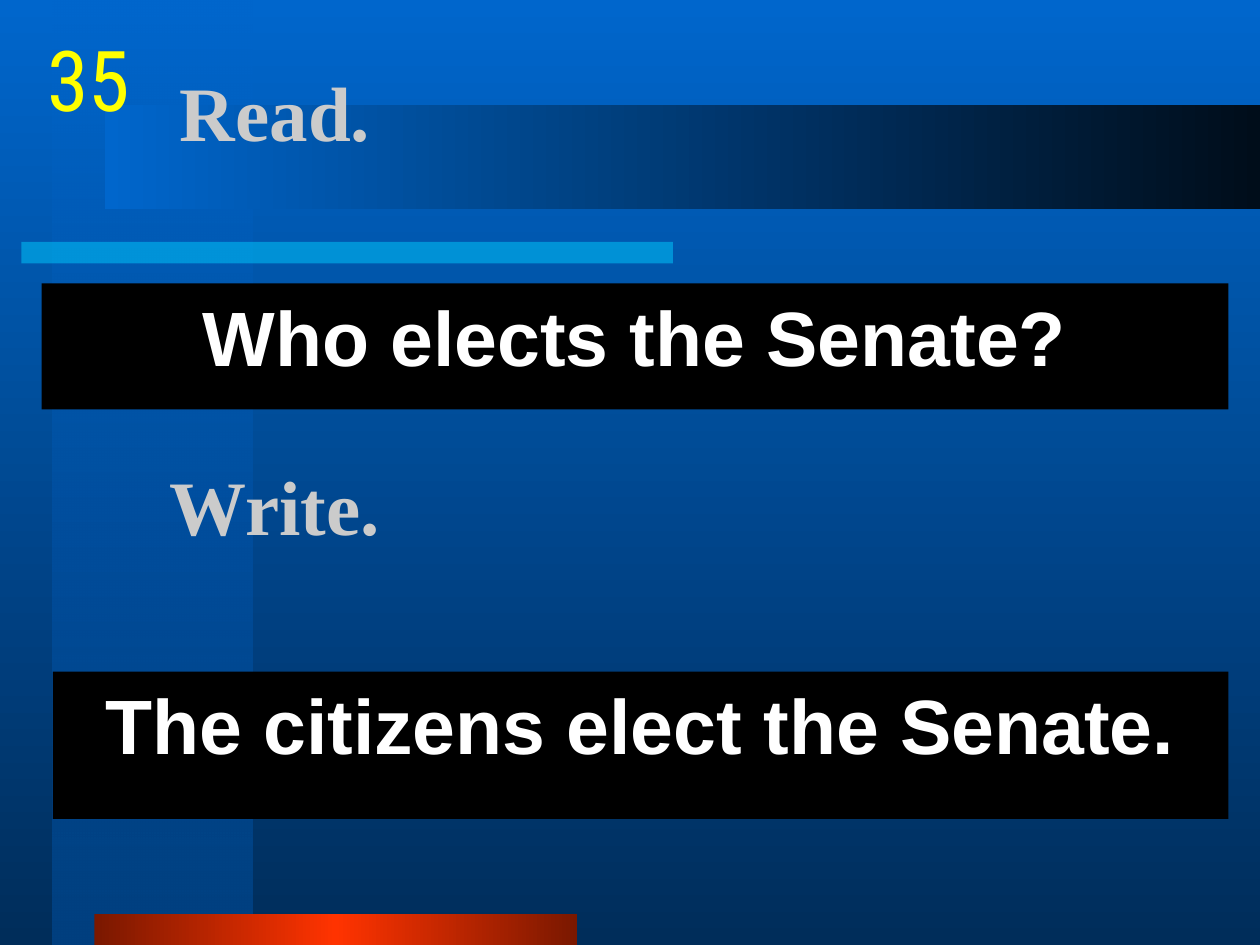
from dataclasses import dataclass

import pptx
import pptx.util
from pptx.dml.color import RGBColor
from pptx.enum.shapes import MSO_SHAPE
from pptx.enum.text import MSO_ANCHOR, PP_ALIGN
from pptx.oxml import parse_xml
from pptx.oxml.ns import nsdecls, qn
from pptx.util import Inches

BLUE = RGBColor(0x00, 0x66, 0xCC)
COLUMN_BLUE = RGBColor(0x00, 0x40, 0x80)
NAVY = RGBColor(0x00, 0x2D, 0x5A)
NIGHT = RGBColor(0x00, 0x0D, 0x1A)
CYAN = RGBColor(0x00, 0xCC, 0xFF)
RED = RGBColor(0xFF, 0x33, 0x00)
DARK_RED = RGBColor(0x7A, 0x18, 0x00)
BLACK = RGBColor(0x00, 0x00, 0x00)
WHITE = RGBColor(0xFF, 0xFF, 0xFF)
GREY = RGBColor(0xCB, 0xCB, 0xCB)
YELLOW = RGBColor(0xFF, 0xFF, 0x00)

DOWN, ACROSS = 270, 0  # gradient angles, counter-clockwise


@dataclass(frozen=True)
class Box:
    left: float
    top: float
    width: float
    height: float

    def lengths(self) -> list:
        return [Inches(n) for n in (self.left, self.top, self.width, self.height)]


@dataclass(frozen=True)
class Stop:
    percent: int
    color: RGBColor
    opacity: int = 100


@dataclass(frozen=True)
class Bar:
    box: Box
    stops: tuple
    angle: int = ACROSS


@dataclass(frozen=True)
class Caption:
    text: str
    box: Box
    font: str
    color: RGBColor
    size: int = 44
    bold: bool = True
    centred: bool = False
    panel: bool = False
    wrap: bool = True
    side_inset: float = 0.1
    anchor: MSO_ANCHOR = MSO_ANCHOR.TOP


def color_xml(stop: Stop) -> str:
    return (f'<a:srgbClr {nsdecls("a")} val="{stop.color}">'
            f'<a:alpha val="{stop.opacity * 1000}"/></a:srgbClr>')


def fill_gradient(fill, element, stops: tuple, angle: int) -> None:
    fill.gradient()
    fill.gradient_angle = angle
    stop_list = next(element.iter(qn("a:gsLst")))
    for default in list(stop_list):
        stop_list.remove(default)
    for stop in stops:
        stop_list.append(parse_xml(
            f'<a:gs {nsdecls("a")} pos="{stop.percent * 1000}">{color_xml(stop)}</a:gs>'))


def add_rectangle(slide, box: Box):
    rectangle = slide.shapes.add_shape(MSO_SHAPE.RECTANGLE, *box.lengths())
    rectangle.shadow.inherit = False
    rectangle.line.fill.background()
    return rectangle


def draw_bar(slide, bar: Bar) -> None:
    rectangle = add_rectangle(slide, bar.box)
    if len(bar.stops) > 1:
        fill_gradient(rectangle.fill, rectangle._element, bar.stops, bar.angle)
        return
    rectangle.fill.solid()
    rectangle.fill.fore_color.rgb = bar.stops[0].color
    solid = rectangle._element.spPr.find(qn("a:solidFill"))
    solid.replace(solid[0], parse_xml(color_xml(bar.stops[0])))


def draw_caption(slide, caption: Caption) -> None:
    if caption.panel:
        holder = add_rectangle(slide, caption.box)
        holder.fill.solid()
        holder.fill.fore_color.rgb = BLACK
    else:
        holder = slide.shapes.add_textbox(*caption.box.lengths())
    frame = holder.text_frame
    frame.text = caption.text
    frame.word_wrap = caption.wrap
    frame.margin_left = frame.margin_right = Inches(caption.side_inset)
    frame.vertical_anchor = caption.anchor
    paragraph = frame.paragraphs[0]
    paragraph.alignment = PP_ALIGN.CENTER if caption.centred else PP_ALIGN.LEFT
    if caption.panel:
        paragraph.space_before = pptx.util.Pt(9)
        properties = paragraph._p.get_or_add_pPr()
        properties.set("marL", str(Inches(0.38)))
        properties.set("indent", str(Inches(-0.38)))
    font = paragraph.runs[0].font
    font.name = caption.font
    font.size = pptx.util.Pt(caption.size)
    font.bold = caption.bold
    font.color.rgb = caption.color


BARS = (
    Bar(Box(0.42, 0, 1.58, 7.5), (Stop(0, BLUE, 50), Stop(100, COLUMN_BLUE)), DOWN),
    Bar(Box(0.17, 1.92, 5.17, 0.17), (Stop(0, CYAN, 50),)),
    Bar(Box(0.75, 7.25, 3.83, 0.25),
        (Stop(0, DARK_RED), Stop(50, RED), Stop(100, DARK_RED))),
    Bar(Box(0.83, 0.83, 9.17, 0.83), (Stop(0, BLUE), Stop(100, NIGHT))),
)


def heading(text: str, box: Box) -> Caption:
    return Caption(text, box, "Times New Roman", GREY, anchor=MSO_ANCHOR.MIDDLE)


def statement(text: str, box: Box) -> Caption:
    return Caption(text, box, "Arial", WHITE, centred=True, panel=True)


CAPTIONS = (
    heading("Read.", Box(1.33, 0.25, 8.5, 1.25)),
    statement("Who elects the Senate?", Box(0.33, 2.25, 9.42, 1)),
    heading("Write.", Box(1.25, 3.17, 8.5, 1.67)),
    statement("The citizens elect the Senate.", Box(0.42, 5.33, 9.33, 1.17)),
    Caption("35", Box(0.33, 0.17, 0.75, 0.83), "Roboto Condensed", YELLOW,
            size=48, bold=False, centred=True, wrap=False, side_inset=0),
)


def main() -> None:
    deck = pptx.Presentation()
    deck.slide_width, deck.slide_height = Inches(10), Inches(7.5)
    slide = deck.slides.add_slide(deck.slide_layouts[6])

    # Background, then decorative bars
    fill_gradient(slide.background.fill, slide._element,
                  (Stop(0, BLUE), Stop(100, NAVY)), DOWN)
    for bar in BARS:
        draw_bar(slide, bar)

    # Question, answer and their headings
    for caption in CAPTIONS:
        draw_caption(slide, caption)

    deck.save("out.pptx")


if __name__ == "__main__":
    main()
